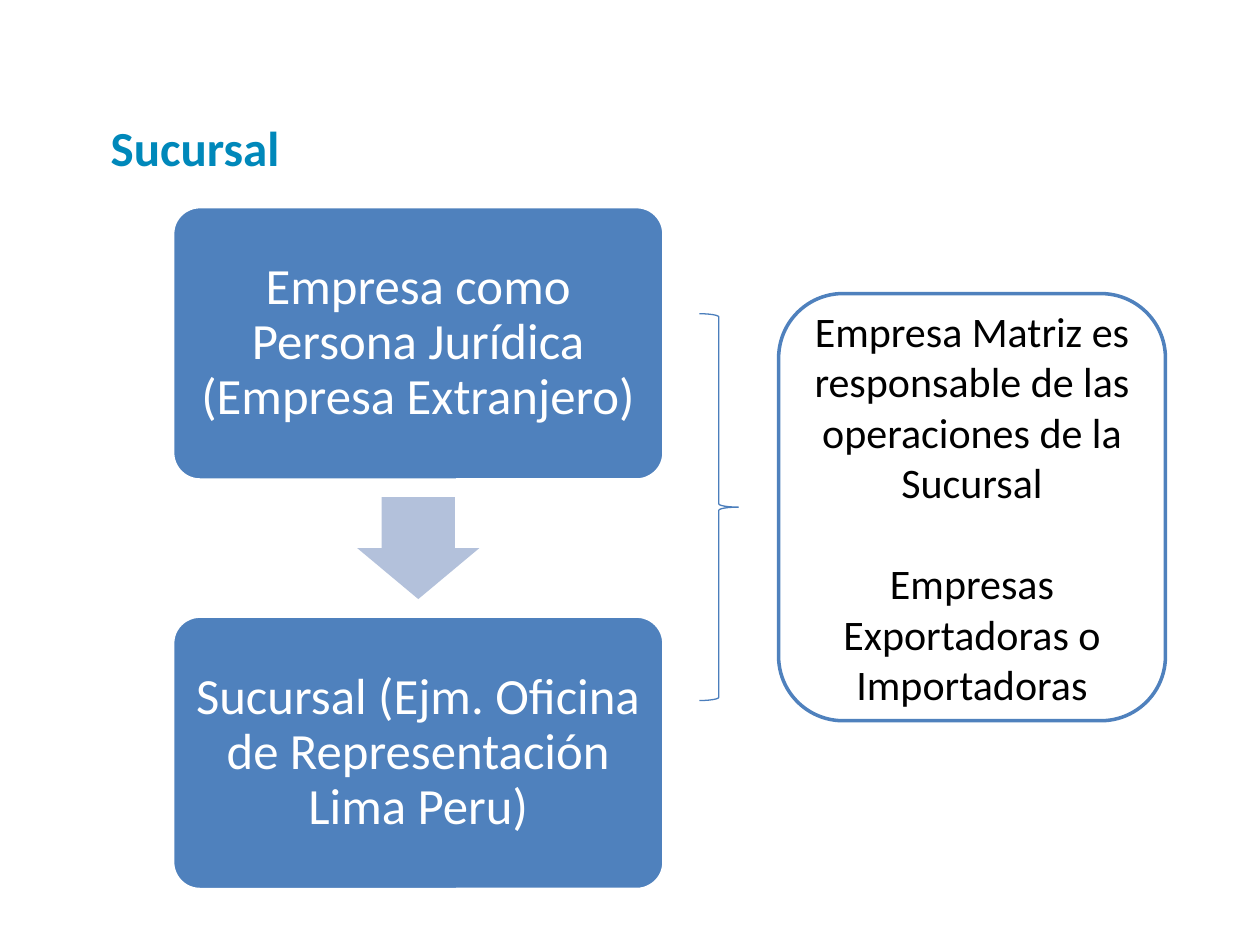
from pptx import Presentation
from pptx.dml.color import RGBColor
from pptx.enum.shapes import MSO_SHAPE
from pptx.enum.text import MSO_ANCHOR, PP_ALIGN
from pptx.util import Inches, Pt

ROUNDED = MSO_SHAPE.ROUNDED_RECTANGLE
DOWN_ARROW = MSO_SHAPE.DOWN_ARROW
RIGHT_BRACE = MSO_SHAPE.RIGHT_BRACE
MIDDLE = MSO_ANCHOR.MIDDLE
LEFT, CENTER = PP_ALIGN.LEFT, PP_ALIGN.CENTER

FONT = "Calibri"
COLORS = {
    "title": "0088BA",
    "box": "4F81BD",
    "arrow": "B3C1DB",
    "brace": "4B7EBC",
    "white": "FFFFFF",
    "black": "000000",
}

TITLE = "Sucursal"
# Each step is a list of lines
STEPS = [
    ["Empresa como Persona Jurídica", "(Empresa Extranjero)"],
    ["Sucursal (Ejm. Oficina de Representación Lima Peru)"],
]
NOTES = [
    "Empresa Matriz es responsable de las operaciones de la Sucursal",
    "Empresas Exportadoras o Importadoras",
]

STEP_LEFT, STEP_TOP = 1.37, 1.64
STEP_WIDTH, STEP_HEIGHT = 3.9, 2.17
STEP_PITCH = 3.25
ARROW_WIDTH, ARROW_HEIGHT = 0.97, 0.81


def color(name):
    return RGBColor.from_string(COLORS[name])


def add_outline(slide, preset, box, fill=None, line=None, line_width=2):
    shape = slide.shapes.add_shape(preset, *map(Inches, box))
    shape.shadow.inherit = False
    if fill:
        shape.fill.solid()
        shape.fill.fore_color.rgb = color(fill)
    else:
        shape.fill.background()
    if line:
        shape.line.color.rgb = color(line)
        shape.line.width = Pt(line_width)
    else:
        shape.line.fill.background()
    return shape


def write(shape, paragraphs, size, ink, align=CENTER, bold=False, inset=None):
    """Fill a shape with paragraphs, each given as a list of lines."""
    frame = shape.text_frame
    frame.word_wrap = True
    frame.vertical_anchor = MIDDLE
    if inset:
        frame.margin_left = frame.margin_right = Inches(inset)
        frame.margin_top = frame.margin_bottom = Inches(inset)
    for i, lines in enumerate(paragraphs):
        paragraph = frame.add_paragraph() if i else frame.paragraphs[0]
        for j, line in enumerate(lines):
            if j:
                paragraph.add_line_break()
            paragraph.add_run().text = line
        paragraph.alignment = align
        paragraph.font.name = FONT
        paragraph.font.size = Pt(size)
        paragraph.font.bold = bold
        paragraph.font.color.rgb = color(ink)
    return frame.paragraphs


prs = Presentation()
prs.slide_width, prs.slide_height = Inches(10), Inches(7.5)
slide = prs.slides.add_slide(prs.slide_layouts[6])

title = slide.shapes.add_textbox(*map(Inches, (0.78, 0.78, 8.08, 0.77)))
write(title, [[TITLE]], 28, "title", align=LEFT, bold=True)

for i, step_lines in enumerate(STEPS):
    top = STEP_TOP + i * STEP_PITCH
    if i:
        gap = STEP_PITCH - STEP_HEIGHT
        arrow = add_outline(
            slide, DOWN_ARROW,
            (STEP_LEFT + (STEP_WIDTH - ARROW_WIDTH) / 2,
             top - (gap + ARROW_HEIGHT) / 2, ARROW_WIDTH, ARROW_HEIGHT),
            fill="arrow")
        arrow.adjustments[0] = 0.6
        arrow.adjustments[1] = 0.5
    step = add_outline(slide, ROUNDED, (STEP_LEFT, top, STEP_WIDTH, STEP_HEIGHT),
                       fill="box", line="white")
    step.adjustments[0] = 0.1
    for paragraph in write(step, [step_lines], 29, "white", inset=0.12):
        paragraph.line_spacing = 0.9

add_outline(slide, RIGHT_BRACE, (5.55, 2.49, 0.31, 3.07),
            line="brace", line_width=0.75)

notes_box = add_outline(slide, ROUNDED, (6.18, 2.33, 3.07, 3.39),
                        fill="white", line="box")
note_paragraphs = write(notes_box, [[note] for note in NOTES], 24, "black")
note_paragraphs[1].space_before = Pt(29)

prs.save("out.pptx")
